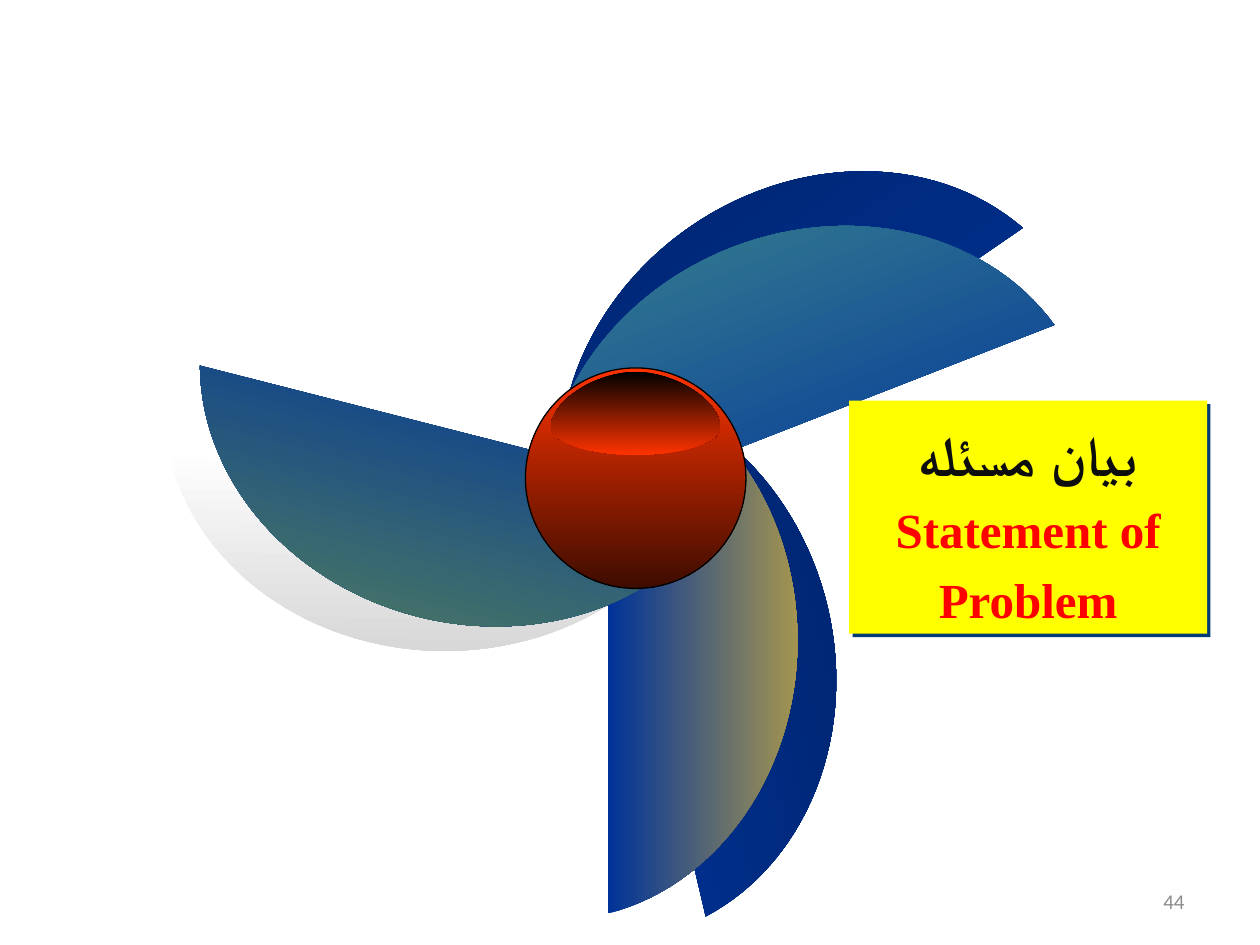
from math import asin, copysign, cos, pi, sin

from lxml import etree
from pptx import Presentation
from pptx.dml.color import RGBColor
from pptx.enum.shapes import MSO_SHAPE
from pptx.enum.text import MSO_ANCHOR, MSO_AUTO_SIZE, PP_ALIGN
from pptx.oxml.ns import qn
from pptx.util import Inches, Pt

RECT, OVAL = MSO_SHAPE.RECTANGLE, MSO_SHAPE.OVAL
CENTER, RIGHT = PP_ALIGN.CENTER, PP_ALIGN.RIGHT
TOP, MIDDLE = MSO_ANCHOR.TOP, MSO_ANCHOR.MIDDLE
GROW = MSO_AUTO_SIZE.SHAPE_TO_FIT_TEXT

TITLE_LINES = [
    {"text": "بیان مسئله", "size": 32, "font": "Arial", "color": "0D0D0D", "rtl": True},
    {"text": "Statement of Problem", "size": 28, "font": "Times New Roman",
     "color": "FF0000", "rtl": False},
]
PAGE_NUMBER = "44"

NAVY, DARK_NAVY = "003399", "002266"
BLACK, RED, DARK_RED = "000000", "FF3300", "3E0C00"
YELLOW, SHADOW_BLUE, GRAY = "FFFF00", "003B76", "8C8C8C"

BACK_BLADES = [
    (5.09, 2.83, 346.8, NAVY, DARK_NAVY),
    (2.75, 2.25, 91, "FFFFFF", "D6D6D6"),
    (5.16, 0.25, 235.5, NAVY, DARK_NAVY),
]
FRONT_BLADES = [
    (4.83, 2.92, 0, NAVY, "A49450"),
    (2.75, 2, 104.3, NAVY, "5B8957"),
    (5.33, 0.5, 248.7, NAVY, "428E8C"),
]

BLADE_WIDTH, BLADE_HEIGHT = 1.5, 4.33
BLADE_RADIUS_X, BLADE_RADIUS_Y = 1.93, 2.22
HUB_LEFT, HUB_TOP, HUB_SIZE = 4.17, 2.92, 1.75
GLOSS_LEFT, GLOSS_TOP, GLOSS_WIDTH = 4.37, 2.95, 1.35
GLOSS_DOME, GLOSS_BOWL = 0.44, 0.22
DOME_ROUNDNESS = 1.75
ACROSS, DOWN = 0, 270
CURVE_STEPS = 60


def rgb(color):
    return RGBColor.from_string(color)


def arc(center_x, center_y, radius_x, radius_y, start, end, roundness=2):
    def bend(value):
        return copysign(abs(value) ** (2 / roundness), value)

    angles = [start + (end - start) * i / CURVE_STEPS for i in range(CURVE_STEPS + 1)]
    return [(center_x + radius_x * bend(cos(a)), center_y + radius_y * bend(sin(a)))
            for a in angles]


def blade_outline():
    middle = BLADE_HEIGHT / 2
    sweep = asin(middle / BLADE_RADIUS_Y)
    return arc(BLADE_WIDTH - BLADE_RADIUS_X, middle,
               BLADE_RADIUS_X, BLADE_RADIUS_Y, -sweep, sweep)


def gloss_outline():
    radius = GLOSS_WIDTH / 2
    dome = arc(radius, GLOSS_DOME, radius, GLOSS_DOME, -pi, 0, DOME_ROUNDNESS)
    bowl = arc(radius, GLOSS_DOME, radius, GLOSS_BOWL, 0, pi)
    return dome + bowl[1:]


def set_gradient(sp, start, end, angle):
    sp.fill.gradient()
    sp.fill.gradient_angle = angle
    for stop, color in zip(sp.fill.gradient_stops, (start, end)):
        stop.color.rgb = rgb(color)


def add_outline(shapes, outline, left, top, start, end, angle):
    points = [(Inches(x), Inches(y)) for x, y in outline]
    builder = shapes.build_freeform(*points[0])
    builder.add_line_segments(points[1:], close=True)
    sp = builder.convert_to_shape(Inches(left), Inches(top))
    sp.shadow.inherit = False
    sp.line.fill.background()
    set_gradient(sp, start, end, angle)
    return sp


def add_blades(shapes, blades):
    for left, top, turn, start, end in blades:
        sp = add_outline(shapes, blade_outline(), left, top, start, end, ACROSS)
        sp.rotation = turn


def add_hub(shapes):
    sp = shapes.add_shape(OVAL, Inches(HUB_LEFT), Inches(HUB_TOP),
                          Inches(HUB_SIZE), Inches(HUB_SIZE))
    sp.shadow.inherit = False
    sp.line.color.rgb = rgb(BLACK)
    sp.line.width = Pt(0.75)
    set_gradient(sp, RED, DARK_RED, DOWN)
    add_outline(shapes, gloss_outline(), GLOSS_LEFT, GLOSS_TOP, BLACK, RED, DOWN)


def add_hard_shadow(sp, color):
    sp.shadow.inherit = False
    effects = sp._element.spPr.find(qn("a:effectLst"))
    shadow = etree.SubElement(effects, qn("a:outerShdw"), dist=str(Pt(2.8)),
                              dir="2700000", algn="ctr", rotWithShape="0")
    etree.SubElement(shadow, qn("a:srgbClr"), val=color)


def style_run(r, size, font, color, bold):
    r.font.size = Pt(size)
    r.font.name = font
    r.font.bold = bold
    r.font.color.rgb = rgb(color)


def add_title(shapes):
    sp = shapes.add_shape(RECT, Inches(6.74), Inches(3.18), Inches(2.84), Inches(1.85))
    sp.fill.solid()
    sp.fill.fore_color.rgb = rgb(YELLOW)
    sp.line.fill.background()
    add_hard_shadow(sp, SHADOW_BLUE)
    tf = sp.text_frame
    tf.word_wrap = True
    tf.auto_size = GROW
    tf.vertical_anchor = TOP
    tf.text = "\n".join(line["text"] for line in TITLE_LINES)
    for p, line in zip(tf.paragraphs, TITLE_LINES):
        p.alignment = CENTER
        p.line_spacing = 1.2
        if line["rtl"]:
            p._p.get_or_add_pPr().set("rtl", "1")
        style_run(p.runs[0], line["size"], line["font"], line["color"], True)


def add_page_number(shapes):
    box = shapes.add_textbox(Inches(7.17), Inches(6.95), Inches(2.33), Inches(0.4))
    tf = box.text_frame
    tf.word_wrap = True
    tf.vertical_anchor = MIDDLE
    tf.text = PAGE_NUMBER
    p = tf.paragraphs[0]
    p.alignment = RIGHT
    style_run(p.runs[0], 12, "Calibri", GRAY, False)


def main():
    prs = Presentation()
    prs.slide_width, prs.slide_height = Inches(10), Inches(7.5)
    s = prs.slides.add_slide(prs.slide_layouts[6])
    add_blades(s.shapes, BACK_BLADES)
    add_blades(s.shapes.add_group_shape().shapes, FRONT_BLADES)
    add_hub(s.shapes.add_group_shape().shapes)
    add_title(s.shapes)
    add_page_number(s.shapes)
    prs.save("out.pptx")


if __name__ == "__main__":
    main()
